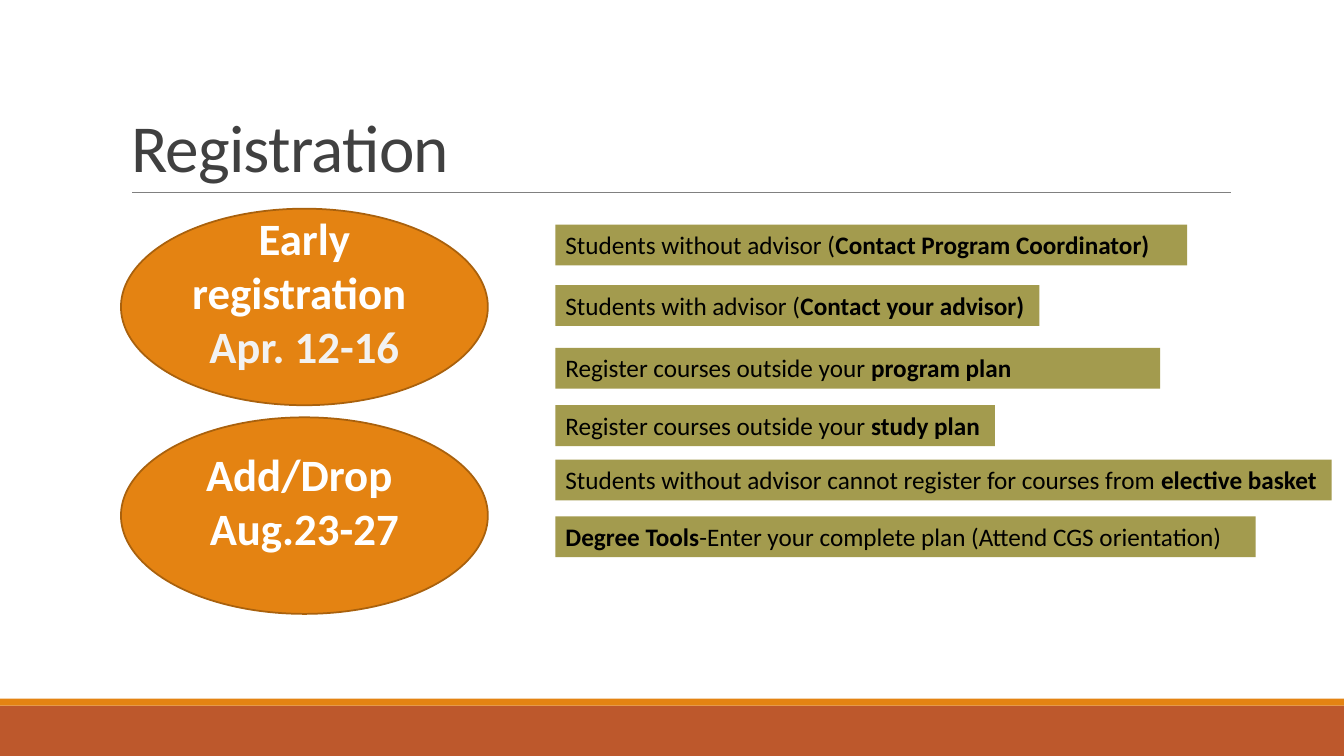
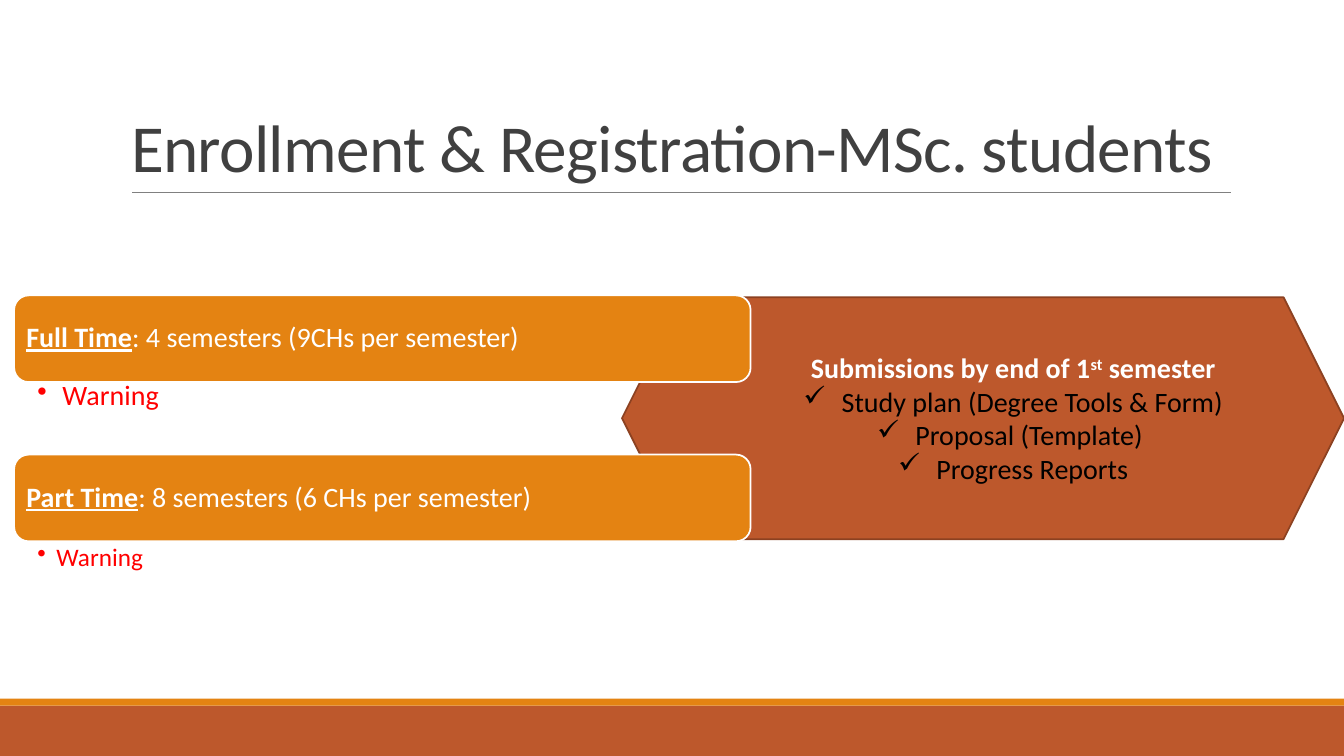
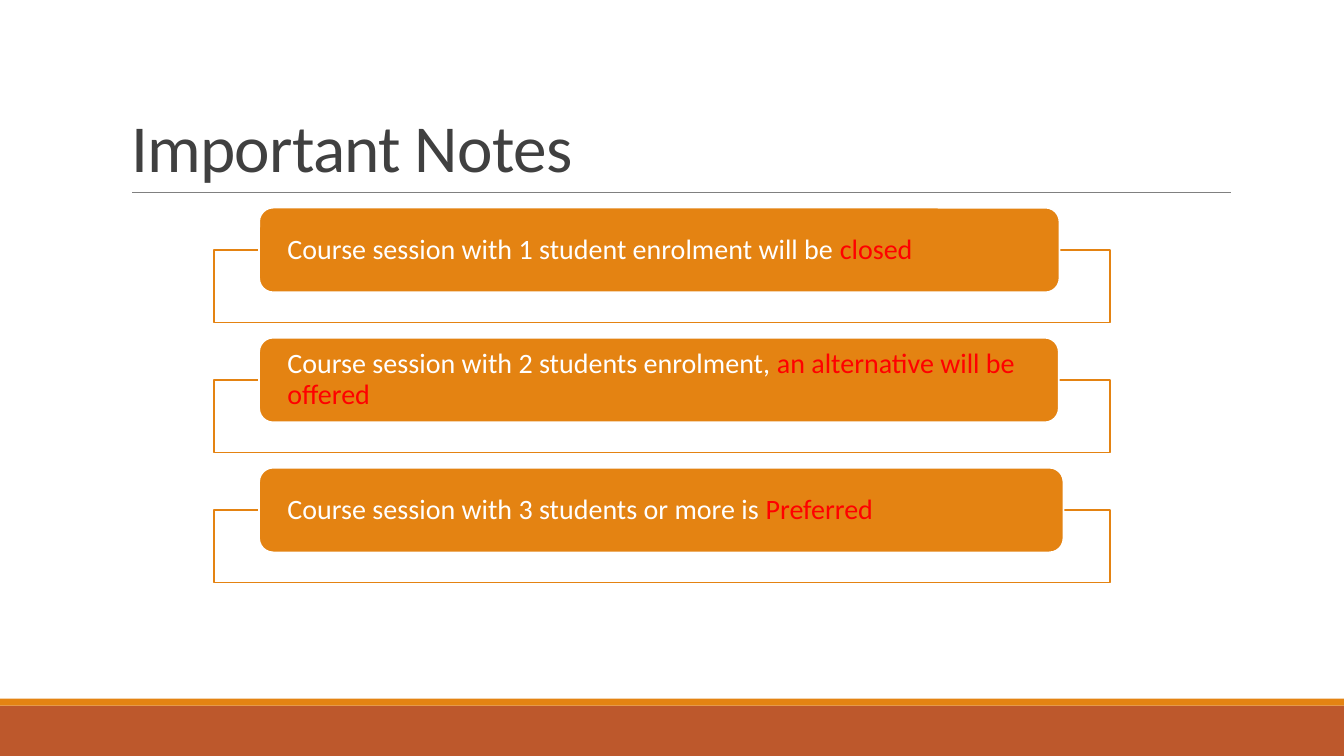
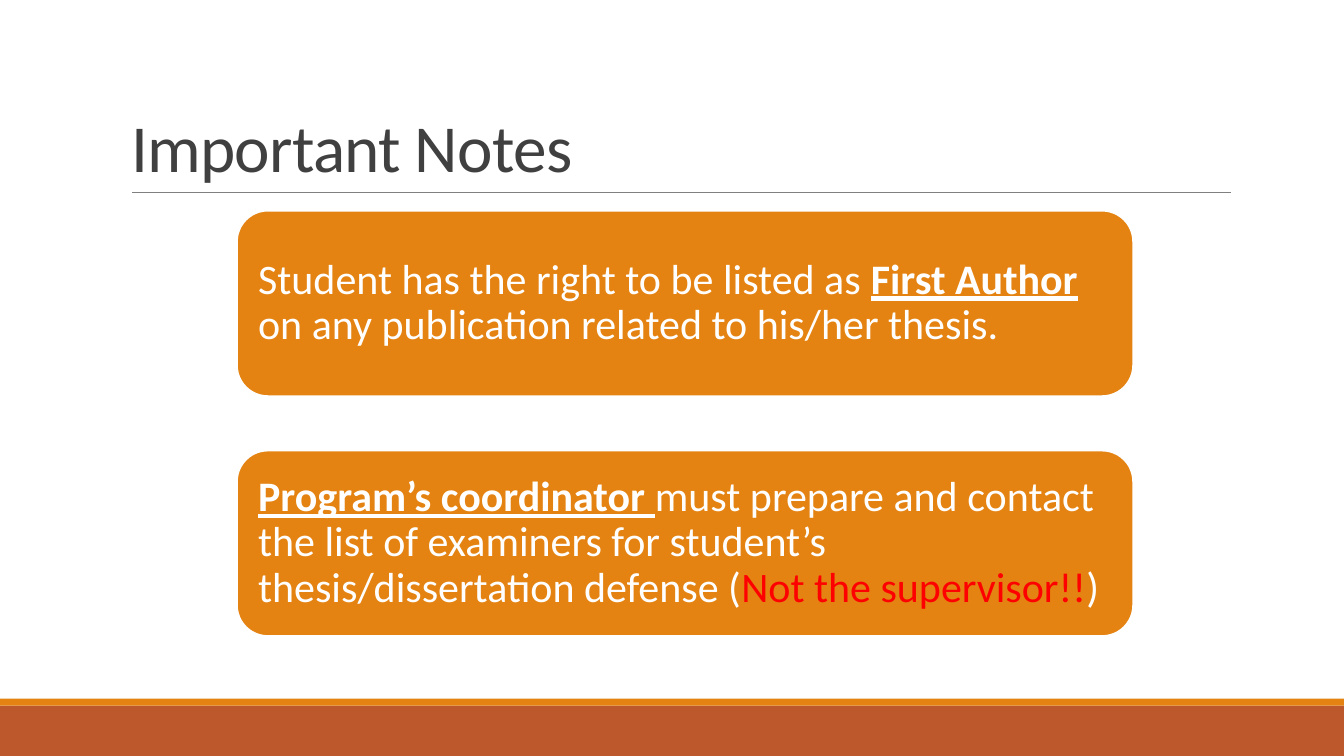
"""Build four slides on course registration and important notes for graduate students."""
from lxml.etree import SubElement
from pptx import Presentation
from pptx.dml.color import RGBColor
from pptx.enum.shapes import MSO_CONNECTOR, MSO_SHAPE as SHAPE
from pptx.enum.text import MSO_ANCHOR as ANCHOR, MSO_AUTO_SIZE, PP_ALIGN as ALIGN
from pptx.oxml.ns import qn
from pptx.util import Inches, Pt

ORANGE = RGBColor(0xE4, 0x83, 0x12)
DARK_ORANGE = RGBColor(0xA9, 0x61, 0x0D)
RUST = RGBColor(0xBD, 0x58, 0x2C)
DARK_RUST = RGBColor(0x8C, 0x41, 0x21)
OLIVE = RGBColor(0xA3, 0x9B, 0x4E)
RED = RGBColor(0xFF, 0x00, 0x00)
WHITE = RGBColor(0xFF, 0xFF, 0xFF)
PALE = RGBColor(0xF2, 0xF2, 0xF2)
BLACK = RGBColor(0x00, 0x00, 0x00)
CHARCOAL = RGBColor(0x40, 0x40, 0x40)
GREY = RGBColor(0x80, 0x80, 0x80)

FONT = "Calibri"
BOLD = {"bold": True}
STRONG = {"bold": True, "underline": True}
ALERT = {"color": RED}

deck = Presentation()
deck.slide_width, deck.slide_height = Inches(13.33), Inches(7.5)
COLUMN, ROW = deck.slide_width / 100, deck.slide_height / 100


def place(slide, kind, x, y, w, h, fill=None, line=None):
    """Add a shape, or a text box when kind is None, measured in grid columns and rows."""
    area = [int(n) for n in (x * COLUMN, y * ROW, w * COLUMN, h * ROW)]
    if kind is None:
        return slide.shapes.add_textbox(*area)
    shape = slide.shapes.add_shape(kind, *area)
    shape.shadow.inherit = False
    shape.fill.solid()
    shape.fill.fore_color.rgb = fill
    if line is None:
        shape.line.fill.background()
    else:
        shape.line.color.rgb = line
        shape.line.width = Pt(1.25)
    return shape


def write(shape, *runs, size=20, color=WHITE, align=ALIGN.LEFT, anchor=ANCHOR.TOP,
          insets=(0.1, 0.05, 0.1, 0.05), spacing=1.0, indent=0, hang=0, bullet=None, tracking=0):
    """Add one paragraph; a run is a string or a pair of string and style."""
    frame = shape.text_frame
    frame.word_wrap = True
    frame.auto_size = MSO_AUTO_SIZE.NONE
    frame.vertical_anchor = anchor
    (frame.margin_left, frame.margin_top,
     frame.margin_right, frame.margin_bottom) = [Inches(n) for n in insets]
    first = frame.paragraphs[0]
    paragraph = frame.add_paragraph() if first.runs else first
    paragraph.alignment = align
    paragraph.line_spacing = spacing
    properties = paragraph._p.get_or_add_pPr()
    properties.set("marL", str(Inches(indent)))
    properties.set("indent", str(Inches(-hang)))
    if bullet:
        SubElement(properties, qn("a:buChar")).set("char", bullet)
    for item in runs:
        words, style = (item, {}) if isinstance(item, str) else item
        run = paragraph.add_run()
        run.text = words
        run.font.name = FONT
        run.font.size = Pt(size)
        run.font.bold = style.get("bold", False)
        run.font.underline = style.get("underline", False)
        run.font.color.rgb = style.get("color", color)
        if tracking:
            run._r.get_or_add_rPr().set("spc", str(tracking))
        if "baseline" in style:
            run._r.get_or_add_rPr().set("baseline", str(style["baseline"]))


layout = deck.slide_layouts[5]
for footer in list(layout.placeholders):
    if footer.placeholder_format.idx:
        footer.element.getparent().remove(footer.element)

headings = ["Registration", "Enrollment & Registration-MSc. students",
            "Important Notes", "Important Notes"]
slides = []
for heading in headings:
    slide = deck.slides.add_slide(layout)
    title = slide.shapes.title
    title.left, title.top = int(9 * COLUMN), int(4.13 * ROW)
    title.width, title.height = int(82.5 * COLUMN), int(21.2 * ROW)
    write(title, heading, size=48, color=CHARCOAL, anchor=ANCHOR.BOTTOM, spacing=0.85, tracking=-50)
    slides.append(slide)
registration, enrollment, sessions, rights = slides

base_band = place(registration, SHAPE.RECTANGLE, 0, 93.33, 100, 6.67, RUST)
thin_band = place(registration, SHAPE.RECTANGLE, 0, 92.4, 100, 0.93, ORANGE)
title_rule = registration.shapes.add_connector(
    MSO_CONNECTOR.STRAIGHT, int(9.83 * COLUMN), int(25.4 * ROW), int(91.58 * COLUMN), int(25.4 * ROW))
title_rule.line.color.rgb = GREY
title_rule.line.width = Pt(0.5)
SubElement(title_rule.element.spPr, qn("a:effectLst"))
for shared in (base_band, thin_band, title_rule):
    layout.shapes.element.append(shared.element)

advice = [
    (29.7, 47, ["Students without advisor (", ("Contact Program Coordinator)", BOLD)]),
    (37.7, 36, ["Students with advisor (", ("Contact your advisor)", BOLD)]),
    (46, 45, ["Register courses outside your ", ("program plan", BOLD)]),
    (53.6, 32.7, ["Register courses outside your ", ("study plan", BOLD)]),
    (60.8, 57.75, ["Students without advisor cannot register for courses from ",
                   ("elective basket", BOLD)]),
    (68.3, 52.1, [("Degree Tools", BOLD), "-Enter your complete plan (Attend CGS orientation)"]),
]
for top, width, runs in advice:
    bar = place(registration, SHAPE.RECTANGLE, 41.33, top, width, 5.4, OLIVE)
    write(bar, *runs, size=18, color=BLACK)

periods = [("Early registration ", "Apr. 12-16", PALE), ("Add/Drop ", "Aug.23-27", WHITE)]
for index, (period, dates, dates_color) in enumerate(periods):
    oval = place(registration, SHAPE.OVAL, 9, 27.6 * (index + 1), 27.3, 26, ORANGE, DARK_ORANGE)
    for words, color in ((period, WHITE), (dates, dates_color)):
        write(oval, (words, BOLD), size=32, color=color, align=ALIGN.CENTER,
              anchor=ANCHOR.MIDDLE, insets=(0.1, 0.05, 0.1, 0.35))

place(enrollment, SHAPE.HEXAGON, 46.28, 39.33, 53.72, 32, RUST, DARK_RUST)
submissions = place(enrollment, None, 50.18, 45.73, 42.9, 23.33)
write(submissions, ("Submissions by end of 1", BOLD), ("st", {"bold": True, "baseline": 30000}),
      (" semester", BOLD), align=ALIGN.CENTER, indent=1)
for document in ("Study plan (Degree Tools & Form)", "Proposal (Template) ", "Progress Reports"):
    write(submissions, document, color=BLACK, align=ALIGN.CENTER, indent=1.38, hang=0.38, bullet="✓")

modes = [
    (39.07, "Full Time", ": 4 semesters (9CHs per semester)", 50, 20, 0.25),
    (60.13, "Part Time", ": 8 semesters (6 CHs per semester)", 71.6, 18, 0.19),
]
for top, mode, load, warning_top, warning_size, hang in modes:
    card = place(enrollment, SHAPE.ROUNDED_RECTANGLE, 1.05, top, 54.8, 11.47, ORANGE, WHITE)
    write(card, (mode, STRONG), load, anchor=ANCHOR.MIDDLE, insets=[0.08] * 4, spacing=0.9)
    warning = place(enrollment, None, 1.05, warning_top, 54.8, 10.13)
    write(warning, "Warning", size=warning_size, color=RED, insets=(0.23, 0.03, 0.16, 0.03),
          spacing=0.9, indent=hang, hang=hang, bullet="•")

outcomes = [
    (59.55, "Course session with 1 student enrolment will be ", "closed"),
    (59.5, "Course session with 2 students enrolment, ", "an alternative will be offered"),
    (59.85, "Course session with 3 students or more is ", "Preferred"),
]
for index, (width, enrolment, outcome) in enumerate(outcomes):
    offset = 17.2 * index
    place(sessions, SHAPE.RECTANGLE, 15.9, 33.07 + offset, 66.68, 9.6, WHITE, ORANGE)
    card = place(sessions, SHAPE.ROUNDED_RECTANGLE, 19.28, 27.47 + offset, width, 11.2, ORANGE, WHITE)
    write(card, enrolment, (outcome, ALERT), anchor=ANCHOR.MIDDLE, insets=(0.24, 0, 0.24, 0), spacing=0.9)

rules = [
    ["Student has the right to be listed as ", ("First Author ", STRONG),
     "on any publication related to his/her thesis."],
    [("Program’s coordinator ", STRONG),
     "must prepare and contact the list of examiners for student’s thesis/dissertation defense (",
     ("Not the supervisor!!", ALERT), ")"],
]
for index, runs in enumerate(rules):
    card = place(rights, SHAPE.ROUNDED_RECTANGLE, 17.63, 27.87 + 31.73 * index, 66.68, 24.53, ORANGE, WHITE)
    write(card, *runs, size=30, anchor=ANCHOR.MIDDLE, insets=[0.12] * 4, spacing=0.9)

deck.save("out.pptx")
